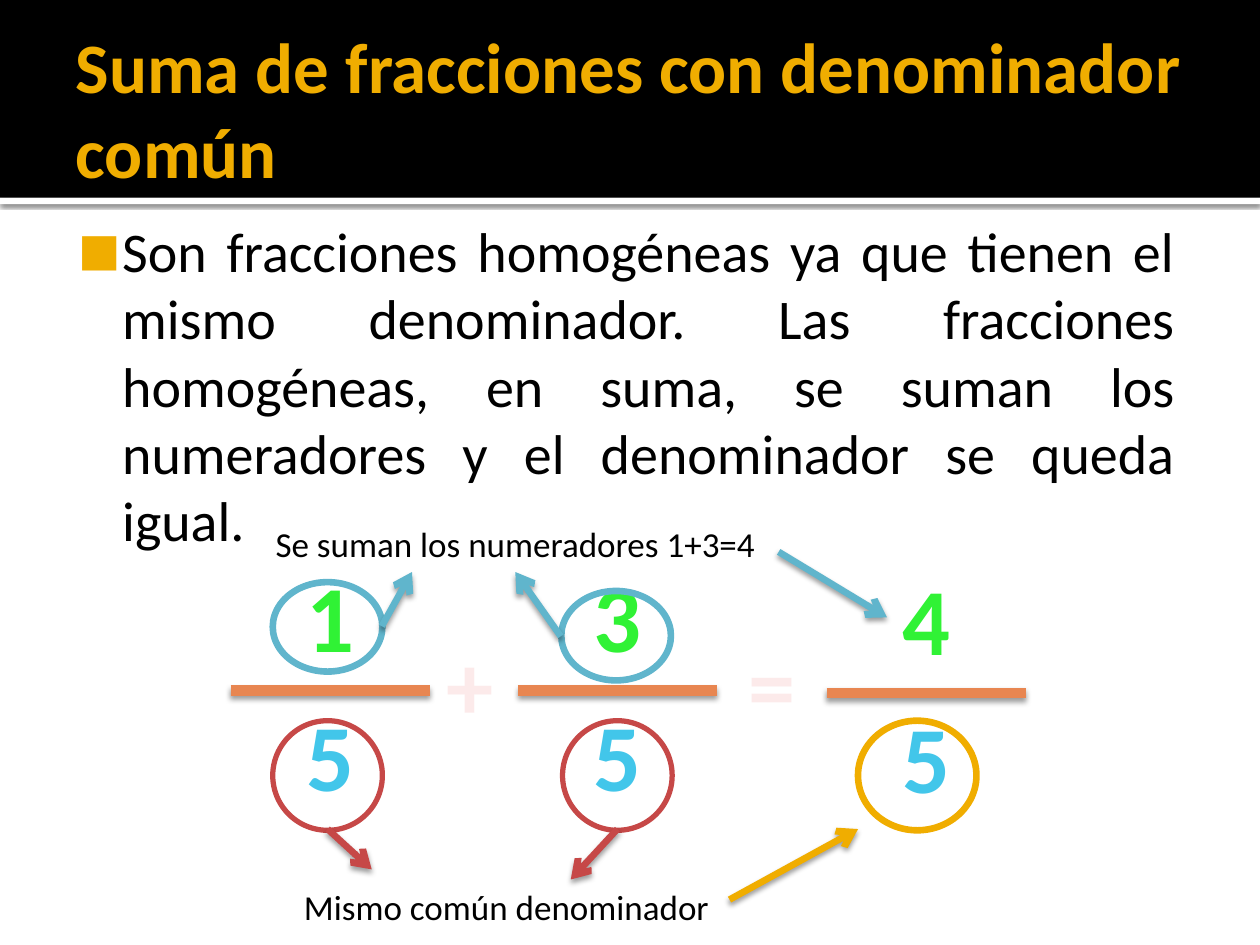
import pptx
import pptx.util
import pptx.dml.color
import pptx.enum.shapes
import pptx.enum.text
import pptx.oxml
import pptx.oxml.ns

FONT = "Calibri"
COLS = 100  # the slide is a grid of 100 columns by 75 rows
WIDE, HIGH = pptx.util.Inches(10), pptx.util.Inches(7.5)
CELL = WIDE / COLS
HUE = {
    "black": "000000", "white": "FFFFFF", "gold": "F0AD00",
    "green": "30F235", "cyan": "42C6EA", "pink": "FCEAEA",
    "bar": "E88651", "red": "C64847", "blue": "60B5CC",
}
KIND = pptx.enum.shapes.MSO_SHAPE
ALIGN = pptx.enum.text.PP_ALIGN
SIZE = pptx.enum.text.MSO_AUTO_SIZE


def cells(*counts):
    return [pptx.util.Emu(round(n * CELL)) for n in counts]


def rgb(hue):
    return pptx.dml.color.RGBColor.from_string(HUE[hue])


def xml(tag, rest):
    return pptx.oxml.parse_xml(f"<a:{tag} {pptx.oxml.ns.nsdecls('a')}{rest}")


def shade(item, blur, dist, alpha):
    """Drop a black shadow straight down; blur and dist in points."""
    blur, dist = pptx.util.Pt(blur), pptx.util.Pt(dist)
    item.element.spPr.append(xml(
        "effectLst",
        f'><a:outerShdw blurRad="{blur}" dist="{dist}" dir="5400000" rotWithShape="0">'
        f'<a:srgbClr val="{HUE["black"]}"><a:alpha val="{alpha * 1000}"/></a:srgbClr>'
        "</a:outerShdw></a:effectLst>"))


def write(para, text, size, hue, bold=False):
    run = para.add_run()
    run.text = text
    font = run.font
    font.name, font.size, font.bold = FONT, pptx.util.Pt(size), bold
    font.color.rgb = rgb(hue)


def place(holder, box, insets):
    """Move a placeholder, set its insets and return its first paragraph."""
    holder.left, holder.top, holder.width, holder.height = cells(*box)
    frame = holder.text_frame
    frame.auto_size, frame.word_wrap = SIZE.NONE, True
    (frame.margin_left, frame.margin_top,
     frame.margin_right, frame.margin_bottom) = cells(*insets)
    para = frame.paragraphs[0]
    para.space_before = pptx.util.Pt(0)
    return para


def band(slide, top, high):
    """Add a full-width strip behind everything else."""
    strip = slide.shapes.add_shape(KIND.RECTANGLE, *cells(0, top, COLS, high))
    strip.shadow.inherit = False
    strip.fill.solid()
    strip.line.fill.background()
    slide.shapes.element.insert(2, strip.element)
    return strip


def head(slide):
    top = band(slide, 0, 15.7)
    top.fill.fore_color.rgb = rgb("black")
    rule = band(slide, 15.7, 0.5)
    rule.fill.fore_color.rgb = rgb("white")
    rule.element.spPr.remove(rule.element.spPr.find(pptx.oxml.ns.qn("a:effectLst")))
    shade(rule, 2.5, 0.8, 60)

    title = slide.shapes.title
    para = place(title, (5, 1.7, 90, 13.7), (1, 0.5, 0.5, 0.5))
    title.text_frame.vertical_anchor = pptx.enum.text.MSO_ANCHOR.MIDDLE
    para.alignment = ALIGN.LEFT
    write(para, "Suma de fracciones con denominador común", 40.5, "gold", True)


def body(slide):
    para = place(slide.placeholders[1], (4.3, 16.2, 90, 28.3), (0.6, 1, 1, 0.5))
    para.alignment = ALIGN.JUSTIFY
    props = para._p.get_or_add_pPr()
    left, hang = cells(4.8, -3.5)
    props.set("marL", str(left))
    props.set("indent", str(hang))
    props.append(xml("buClr", f'><a:srgbClr val="{HUE["gold"]}"/></a:buClr>'))
    props.append(xml("buSzPct", ' val="80000"/>'))
    props.append(xml("buFont", f' typeface="{FONT}"/>'))
    props.append(xml("buChar", ' char="■"/>'))
    write(para, "Son fracciones homogéneas ya que tienen el mismo denominador. "
          "Las fracciones homogéneas, en suma, se suman los numeradores y el "
          "denominador se queda igual.", 32, "black")


def label(slide, mid, top, text, size, hue, box, bold=False, wrap=False):
    """Add text centred on column mid; box is its width and height."""
    wide, high = box
    frame = slide.shapes.add_textbox(
        *cells(mid - wide / 2, top, wide, high)).text_frame
    frame.word_wrap, frame.auto_size = wrap, SIZE.SHAPE_TO_FIT_TEXT
    para = frame.paragraphs[0]
    para.alignment = ALIGN.CENTER
    write(para, text, size, hue, bold)


def sign(slide, mid, top, text, hue):
    label(slide, mid, top, text, 54, hue, (5.8, 10.1), bold=True)


def note(slide, mid, top, text):
    label(slide, mid, top, text, 20, "black", (43.3, 4.4), wrap=True)


def line(slide, start, end, hue, width, arrow=True):
    link = slide.shapes.add_connector(
        pptx.enum.shapes.MSO_CONNECTOR.STRAIGHT, *cells(*start, *end))
    link.line.color.rgb = rgb(hue)
    link.line.width = pptx.util.Pt(width)
    if arrow:
        link.line._get_or_add_ln().append(xml("tailEnd", ' type="arrow"/>'))
    shade(link, 3.1, 2, 38)


def ring(slide, mid, top, wide, high, hue, width):
    oval = slide.shapes.add_shape(
        KIND.OVAL, *cells(mid - wide / 2, top, wide, high))
    oval.shadow.inherit = False
    oval.fill.background()
    oval.line.color.rgb = rgb(hue)
    oval.line.width = pptx.util.Pt(width)


def ratio(slide, mid, row, above, below):
    """Add a fraction whose bar lies on the given row."""
    sign(slide, mid, row - 11, above, "green")
    sign(slide, mid, row, below, "cyan")
    line(slide, (mid - 7.9, row), (mid + 7.9, row), "bar", 6, arrow=False)


def main():
    deck = pptx.Presentation()
    deck.slide_width, deck.slide_height = WIDE, HIGH
    slide = deck.slides.add_slide(deck.slide_layouts[1])
    head(slide)
    body(slide)

    for mid, row, above in ((26.2, 54.8, "1"), (49, 54.8, "3"), (73.5, 55, "4")):
        ratio(slide, mid, row, above, "5")
    for mid, text in ((37.3, "+"), (61.3, "=")):
        sign(slide, mid, 49.2, text, "pink")

    for mid, top, wide, high, hue, width in (
            (26, 57.2, 8.7, 8.7, "red", 3),
            (49, 57.2, 8.7, 8.7, "red", 3),
            (72.8, 57.2, 9.4, 8.7, "gold", 3.78),
            (26, 46.2, 8.7, 7.1, "blue", 3.78),
            (48.9, 46.9, 8.7, 7.1, "blue", 3.78)):
        ring(slide, mid, top, wide, high, hue, width)

    note(slide, 40.9, 41, "Se suman los numeradores 1+3=4")
    note(slide, 40.2, 69.8, "Mismo común denominador")

    for start, end, hue in (
            ((26, 65.8), (29.5, 69), "red"),
            ((49, 65.8), (45.3, 69.8), "red"),
            ((30.3, 49.7), (32.7, 45.4), "blue"),
            ((44.5, 50.5), (40.9, 45.4), "blue"),
            ((61.8, 43.8), (70.4, 49), "blue"),
            ((57.9, 71.4), (68.1, 65.8), "gold")):
        line(slide, start, end, hue, 3.8)

    deck.save("out.pptx")


if __name__ == "__main__":
    main()
